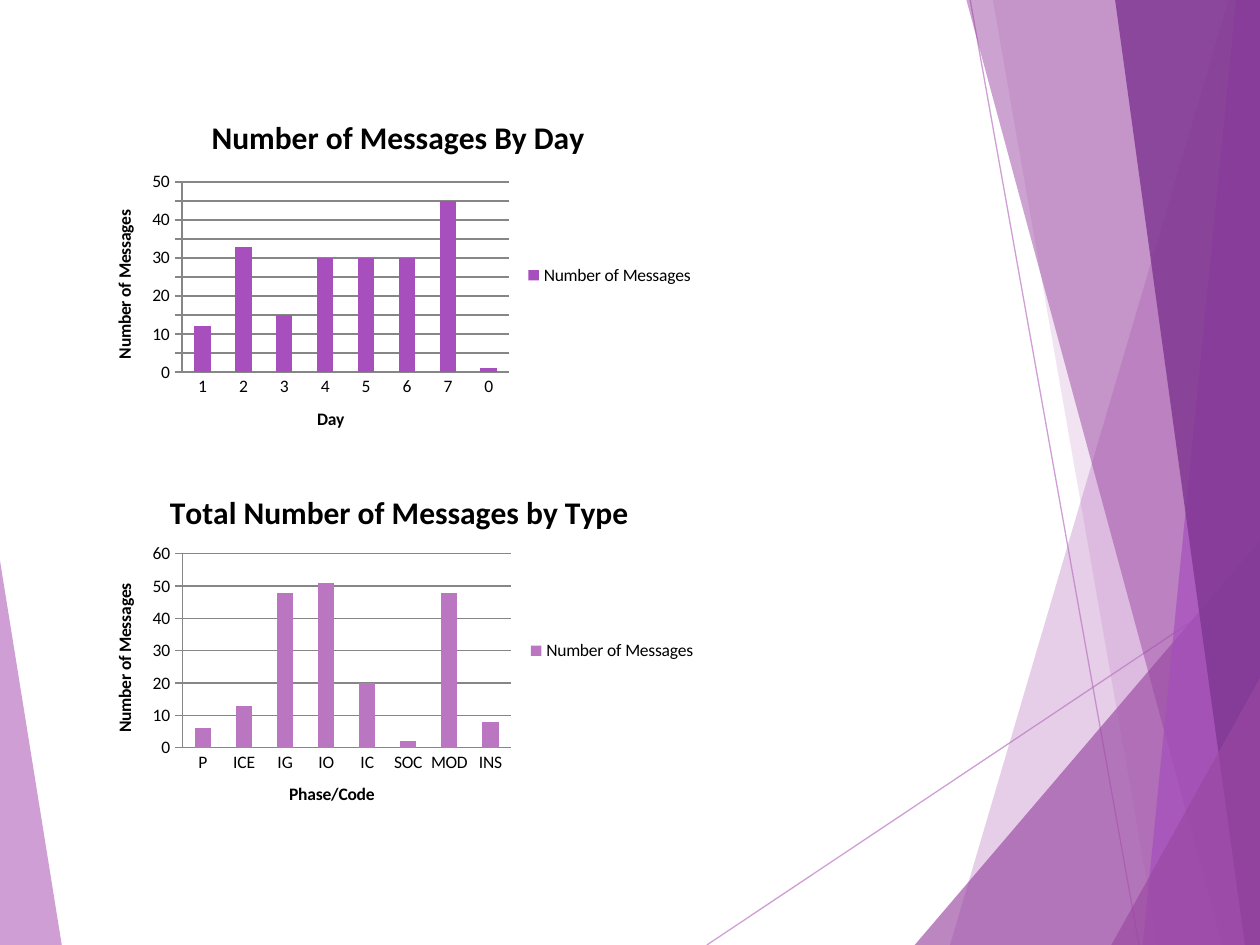
from lxml import etree
from pptx import Presentation
from pptx.chart.data import CategoryChartData
from pptx.dml.color import RGBColor
from pptx.enum.chart import XL_CHART_TYPE, XL_LEGEND_POSITION, XL_TICK_MARK
from pptx.enum.shapes import MSO_CONNECTOR
from pptx.oxml.ns import qn
from pptx.util import Inches, Pt

COLUMN = XL_CHART_TYPE.COLUMN_CLUSTERED
RIGHT = XL_LEGEND_POSITION.RIGHT
TICK_NONE, TICK_OUT = XL_TICK_MARK.NONE, XL_TICK_MARK.OUTSIDE
STRAIGHT = MSO_CONNECTOR.STRAIGHT
COLORS = {"orchid": "BB76C2", "plum": "9A48A2", "violet": "A64FBD",
          "purple": "7F3792", "text": "000000", "grid": "868686"}
SERIES = "Number of Messages"
W, H = 10, 7.5


def set_color(fill, name, opacity):
    """Solid fill with the opacity given in percent."""
    fill.solid()
    fill.fore_color.rgb = RGBColor.from_string(COLORS[name])
    color = fill._xPr.find(qn("a:solidFill"))[0]
    etree.SubElement(color, qn("a:alpha")).set("val", str(opacity * 1000))


def set_font(font, size=10, bold=False):
    font.name, font.size, font.bold = "Calibri", Pt(size), bold
    font.color.rgb = RGBColor.from_string(COLORS["text"])


prs = Presentation()
prs.slide_width, prs.slide_height = Inches(W), Inches(H)
s = prs.slides.add_slide(prs.slide_layouts[6])

# Thin crossing lines
for x1, y1, x2, y2 in [(5.61, H, W, 4.57), (7.7, 0, 9.04, H)]:
    line = s.shapes.add_connector(STRAIGHT, Inches(x1), Inches(y1), Inches(x2), Inches(y2))
    line.line.width = Pt(0.75)
    set_color(line.line.fill, "orchid", 70)
    etree.SubElement(line._element.spPr, qn("a:effectLst"))

# Translucent facets along the slide edges
facets = [
    ("orchid", 70, [(0, 4.45), (0.49, H), (0, H)]),
    ("orchid", 36, [(9.75, 0), (7.54, H), (W, H), (W, 0)]),
    ("orchid", 20, [(7.88, 0), (9.19, H), (W, H), (W, 0)]),
    ("plum", 66, [(7.26, H), (W, 4.29), (W, H)]),
    ("plum", 50, [(7.67, 0), (9.7, H), (W, H), (W, 0)]),
    ("violet", 70, [(9.81, 0), (9.07, H), (W, H), (W, 0)]),
    ("purple", 82, [(8.85, 0), (9.88, H), (W, H), (W, 0)]),
    ("plum", 66, [(8.82, H), (W, 5.38), (W, H)]),
]
for name, opacity, points in facets:
    points = [(Inches(x), Inches(y)) for x, y in points]
    builder = s.shapes.build_freeform(*points[0])
    builder.add_line_segments(points[1:], close=True)
    sp = builder.convert_to_shape()
    sp.shadow.inherit = False
    set_color(sp.fill, name, opacity)
    sp.line.fill.background()

# Column charts: title, axis title, colour, categories, values,
# top, width, axis maximum, axis step, plot area (x, y, w, h as fractions)
charts = [
    ("Number of Messages By Day", "Day", "violet", list("12345670"),
     [12, 33, 15, 30, 30, 30, 45, 1], 0.76, 4.9, 50, 5, (0.15, 0.24, 0.53, 0.53)),
    ("Total Number of Messages by Type", "Phase/Code", "orchid",
     ["P", "ICE", "IG", "IO", "IC", "SOC", "MOD", "INS"],
     [6, 13, 48, 51, 20, 2, 48, 8], 3.74, 4.92, 60, 10, (0.15, 0.23, 0.53, 0.54)),
]
for title, cat_title, color, cats, vals, top, width, top_value, step, area in charts:
    data = CategoryChartData()
    data.categories = cats
    data.add_series(SERIES, vals)
    chart = s.shapes.add_chart(COLUMN, Inches(0.71), Inches(top), Inches(width),
                               Inches(2.85), data).chart
    set_font(chart.font)

    # Titles and axes
    cat, val = chart.category_axis, chart.value_axis
    for owner, text, size in [(chart, title, 18), (cat, cat_title, 10), (val, SERIES, 10)]:
        tf = (chart.chart_title if owner is chart else owner.axis_title).text_frame
        tf.text = text
        set_font(tf.paragraphs[0].font, size, True)
    chart.chart_title.include_in_layout = False
    cat.major_tick_mark, val.major_tick_mark = TICK_NONE, TICK_OUT
    val.minimum_scale, val.maximum_scale, val.major_unit = 0, top_value, step
    val.has_major_gridlines = True
    for fmt in (cat.format, val.format, val.major_gridlines.format):
        fmt.line.width = Pt(0.75)
        fmt.line.color.rgb = RGBColor.from_string(COLORS["grid"])

    # Legend and columns
    chart.has_legend = True
    chart.legend.position = RIGHT
    chart.legend.include_in_layout = False
    plot = chart.plots[0]
    plot.gap_width, plot.vary_by_categories = 150, False
    fill = plot.series[0].format.fill
    fill.solid()
    fill.fore_color.rgb = RGBColor.from_string(COLORS[color])

    # Fixed inner plot area
    plot_area = chart._chartSpace.chart.plotArea
    for old in plot_area.findall(qn("c:layout")):
        plot_area.remove(old)
    layout = etree.Element(qn("c:layout"))
    manual = etree.SubElement(layout, qn("c:manualLayout"))
    settings = [("layoutTarget", "inner"), ("xMode", "edge"), ("yMode", "edge")]
    for tag, value in settings + list(zip("xywh", area)):
        etree.SubElement(manual, qn("c:" + tag)).set("val", str(value))
    plot_area.insert(0, layout)

prs.save("out.pptx")
